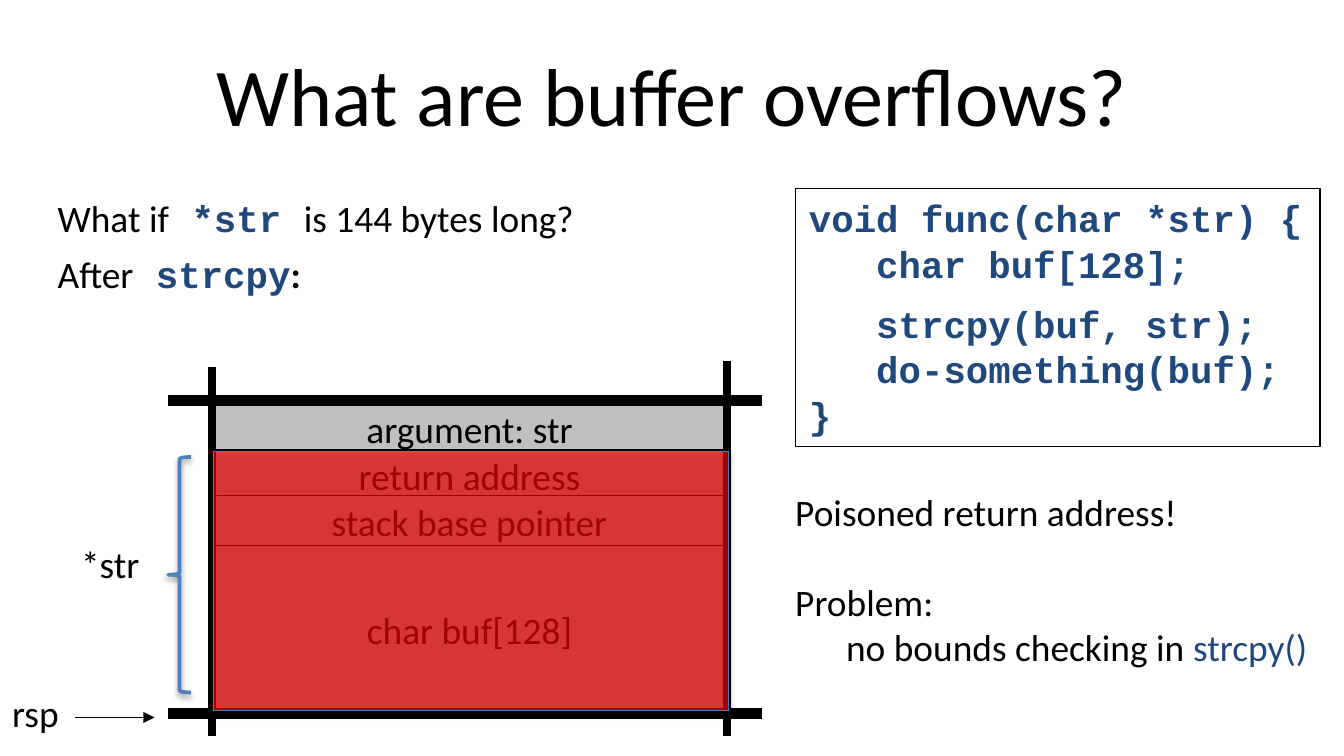
from dataclasses import dataclass

from pptx import Presentation
from pptx.dml.color import RGBColor
from pptx.enum.shapes import MSO_CONNECTOR, MSO_SHAPE
from pptx.enum.text import MSO_ANCHOR, PP_ALIGN
from pptx.oxml import parse_xml
from pptx.oxml.ns import nsdecls
from pptx.util import Cm, Pt

RECT, BRACE = MSO_SHAPE.RECTANGLE, MSO_SHAPE.LEFT_BRACE
STRAIGHT = MSO_CONNECTOR.STRAIGHT
TOP, MIDDLE = MSO_ANCHOR.TOP, MSO_ANCHOR.MIDDLE
LEFT, CENTER = PP_ALIGN.LEFT, PP_ALIGN.CENTER


@dataclass(frozen=True)
class Theme:
    ink: str = "000000"
    code: str = "1F497D"
    cell: str = "BFBFBF"
    overflow: str = "FF0000"
    overflow_edge: str = "4B7EBC"
    brace: str = "4F81BD"
    font: str = "Calibri"
    mono: str = "Courier New"
    title_size: int = 44
    size: int = 20
    hairline: float = 0.75
    wall: float = 4.5
    rail: float = 6


T = Theme()
PLAIN = {"name": T.font, "size": Pt(T.size), "bold": False}
MONO = {"name": T.mono, "size": Pt(T.size), "bold": True}
STRONG = {**PLAIN, "bold": True}


def rgb(value):
    return RGBColor.from_string(value)


def add_run(p, text, fmt=PLAIN, color=T.ink):
    r = p.add_run()
    r.text = text
    for key, value in fmt.items():
        setattr(r.font, key, value)
    r.font.color.rgb = rgb(color)


def set_text(sp, paragraphs, wrap=True, anchor=TOP, align=LEFT):
    """Fill a shape; each paragraph is (format dict, list of add_run arguments)."""
    tf = sp.text_frame
    tf.word_wrap, tf.vertical_anchor = wrap, anchor
    for i, (fmt, runs) in enumerate(paragraphs):
        p = tf.paragraphs[0] if i == 0 else tf.add_paragraph()
        p.alignment = align
        for key, value in fmt.items():
            setattr(p, key, value)
        for run in runs:
            add_run(p, *run)


def add_text(s, box, paragraphs, **options):
    sp = s.shapes.add_textbox(*map(Cm, box))
    set_text(sp, paragraphs, **options)
    return sp


def add_box(s, box, line, width, fill=None, kind=RECT):
    sp = s.shapes.add_shape(kind, *map(Cm, box))
    if fill:
        sp.fill.solid()
        sp.fill.fore_color.rgb = rgb(fill)
    else:
        sp.fill.background()
    sp.line.color.rgb, sp.line.width = rgb(line), Pt(width)
    sp.shadow.inherit = False
    return sp


def add_shadow(sp, alpha, distance):
    effects = sp._element.spPr.find(".//{*}effectLst")
    effects.append(parse_xml(
        f'<a:outerShdw {nsdecls("a")} blurRad="40000" dist="{distance}" '
        f'dir="5400000" rotWithShape="0"><a:srgbClr val="{T.ink}">'
        f'<a:alpha val="{alpha * 1000}"/></a:srgbClr></a:outerShdw>'))


def add_line(s, x1, y1, x2, y2, width, arrow=False):
    line = s.shapes.add_connector(STRAIGHT, *map(Cm, (x1, y1, x2, y2)))
    line.line.color.rgb, line.line.width = rgb(T.ink), Pt(width)
    spPr = line._element.spPr
    if arrow:
        spPr.find("{*}ln").append(
            parse_xml(f'<a:tailEnd {nsdecls("a")} type="triangle"/>'))
    spPr.append(parse_xml(f'<a:effectLst {nsdecls("a")}/>'))


def place_title(s, box):
    title = s.shapes.title
    title.left, title.top, title.width, title.height = map(Cm, box)
    fmt = {**PLAIN, "size": Pt(T.title_size)}
    set_text(title, [({}, [("What are buffer overflows?", fmt)])],
             anchor=MIDDLE, align=CENTER)


def place_code(s, box):
    sp = add_box(s, box, T.ink, T.hairline)
    lines = ["void func(char *str) {", "   char buf[128];",
             "   strcpy(buf, str);", "   do-something(buf);", "}"]
    gaps = {2: 8}  # room between declaration and calls
    set_text(sp, [({"line_spacing": Pt(24.3), "space_before": Pt(gaps.get(i, 0))},
                   [(line, MONO, T.code)]) for i, line in enumerate(lines)])


def place_question(s, box):
    add_text(s, box, [
        ({}, [("What if",), (" *str ", MONO, T.code),
              ("is 144 bytes long?",)]),
        ({"space_before": Pt(6)}, [("After",), (" strcpy", MONO, T.code),
                                   (":", STRONG)]),
    ])


def place_stack(s, box):
    x, y, w, h = box
    right, bottom = x + w, y + h

    # Frame cells: label, offset from the top, height
    cells = [("argument: str", 0, 1.07), ("return address", 0.94, 0.97),
             ("stack base pointer", 1.8, 0.97), ("char buf[128]", 2.74, 3.18)]
    for label, offset, height in cells:
        sp = add_box(s, (x, y + offset, w, height), T.ink, T.hairline, T.cell)
        set_text(sp, [({}, [(label,)])], wrap=False, anchor=MIDDLE, align=CENTER)

    # Rails and walls that run on past the frame
    for level in (bottom, y):
        add_line(s, x - 0.83, level, right + 0.66, level, T.rail)
    for wall, rise in ((x, 0.64), (right, 0.74)):
        add_line(s, wall, y - rise, wall, y + 0.2, T.wall)
        add_line(s, wall, bottom - 1.07, wall, bottom + 0.43, T.wall)
    add_box(s, box, T.ink, T.wall)

    # Overwritten part
    sp = add_box(s, (x + 0.03, y + 0.96, w, h - 1.02),
                 T.overflow_edge, T.hairline, T.overflow)
    sp._element.spPr.find("{*}solidFill")[0].append(
        parse_xml(f'<a:alpha {nsdecls("a")} val="64000"/>'))
    add_shadow(sp, 35, 23000)

    # Stack pointer
    add_text(s, (x - 4.04, bottom - 0.56, 1.4, 1.12), [({}, [("rsp",)])],
             wrap=False, align=CENTER)
    add_line(s, x - 2.59, bottom + 0.07, x - 1.09, bottom + 0.07,
             T.hairline, arrow=True)

    # Extent of the string
    sp = add_box(s, (x - 0.83, y + 1.07, 0.43, 4.45), T.brace, 2, kind=BRACE)
    add_shadow(sp, 38, 20000)
    add_text(s, (x - 2.74, y + 2.54, 1.63, 1.12), [({}, [("*str",)])],
             wrap=False, align=CENTER)


def place_conclusion(s, box):
    sp = add_text(s, box, [
        ({}, [("Poisoned return address!",)]),
        ({"space_before": Pt(24.4)}, [("Problem:",)]),
        ({}, [("no bounds checking in ",), ("strcpy()", PLAIN, T.code)]),
    ])
    sp.text_frame.paragraphs[-1]._p.get_or_add_pPr().set("marL", str(Cm(0.96)))


def main():
    prs = Presentation()
    prs.slide_width, prs.slide_height = Cm(25.4), Cm(14.29)
    s = prs.slides.add_slide(prs.slide_layouts.get_by_name("Title Only"))
    place_title(s, (1.27, 0.58, 22.86, 2.39))
    place_code(s, (15.04, 3.56, 9.91, 4.88))
    place_question(s, (0.84, 3.56, 10.95, 2.24))
    place_stack(s, (4.01, 7.57, 9.73, 5.92))
    place_conclusion(s, (14.78, 9.12, 10.44, 3.68))
    prs.save("out.pptx")


if __name__ == "__main__":
    main()
